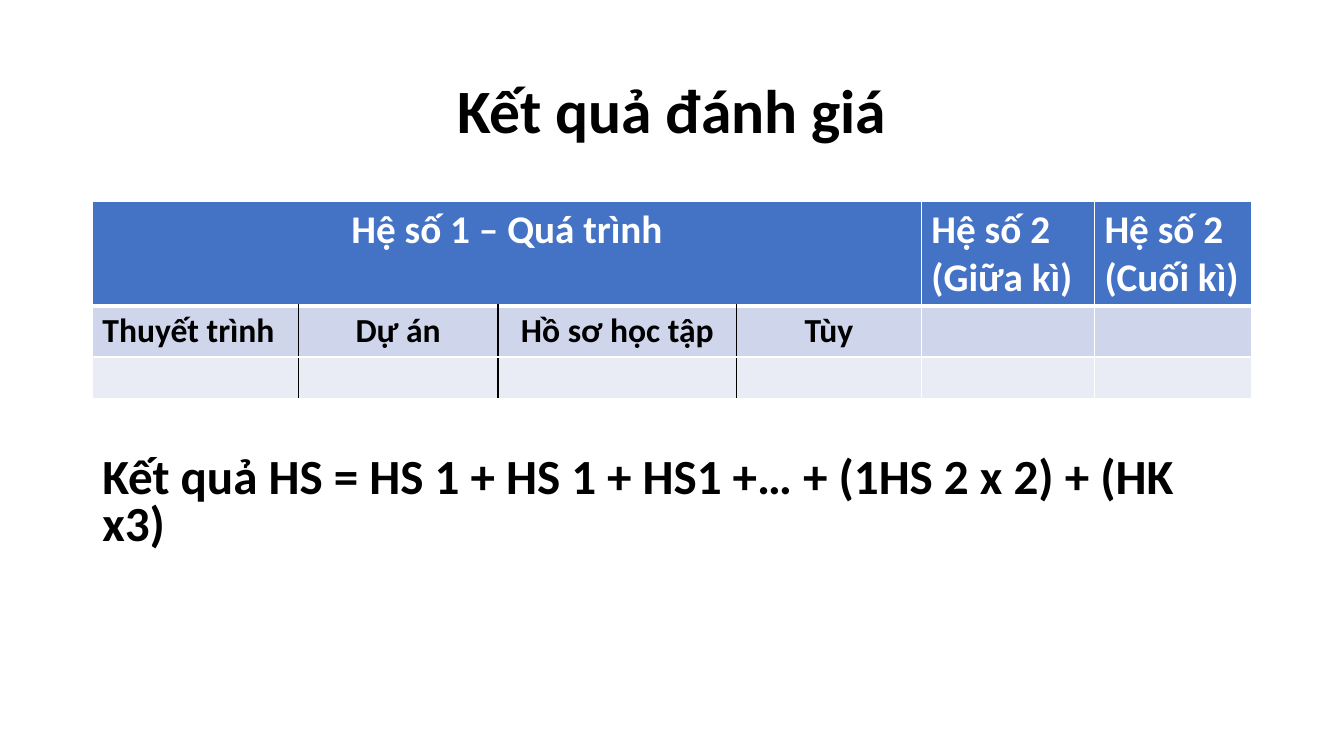
from lxml import etree
from pptx import Presentation, util as u
from pptx.dml.color import RGBColor
from pptx.enum import text
from pptx.oxml.ns import qn

COLORS = {"ink": "000000", "white": "FFFFFF", "header": "4472C4",
          "band": "CFD5EA", "light": "E9EBF5"}
CENTER, LEFT = text.PP_ALIGN.CENTER, text.PP_ALIGN.LEFT
MIDDLE, TOP = text.MSO_ANCHOR.MIDDLE, text.MSO_ANCHOR.TOP


def write(tf, content, size=24, color="ink", align=LEFT, spacing=None):
    """Fill a text frame, one paragraph per line of content."""
    for i, line in enumerate(content.split("\n")):
        p = tf.add_paragraph() if i else tf.paragraphs[0]
        p.alignment = align
        if spacing:
            p.line_spacing = spacing
        r = p.add_run()
        r.text = line
        r.font.name, r.font.size, r.font.bold = "Calibri", u.Pt(size), True
        r.font.color.rgb = RGBColor.from_string(COLORS[color])


class Deck:
    """Places elements on a grid of 160 columns by 90 rows."""

    def __init__(self):
        self.prs = Presentation()
        self.prs.slide_width, self.prs.slide_height = u.Inches(13.33), u.Inches(7.5)
        self.s = self.prs.slides.add_slide(self.prs.slide_layouts[6])

    def x(self, columns):
        return round(self.prs.slide_width * columns / 160)

    def y(self, rows):
        return round(self.prs.slide_height * rows / 90)

    def text_box(self, left, top, width, height, content, anchor=MIDDLE, **style):
        sp = self.s.shapes.add_textbox(self.x(left), self.y(top),
                                       self.x(width), self.y(height))
        tf = sp.text_frame
        tf.word_wrap, tf.vertical_anchor = True, anchor
        write(tf, content, **style)

    def table(self, left, top, widths, heights):
        table = self.s.shapes.add_table(
            len(heights), len(widths), self.x(left), self.y(top),
            self.x(sum(widths)), self.y(sum(heights))).table
        table.first_row = table.horz_banding = False
        for column, width in zip(table.columns, widths):
            column.width = self.x(width)
        for row, height in zip(table.rows, heights):
            row.height = self.y(height)
        return table

    def cell(self, cell, fill, borders):
        """Set the fill, and borders given as side: (colour, points)."""
        tcPr = cell._tc.get_or_add_tcPr()
        for side, (color, width) in borders.items():
            ln = etree.SubElement(tcPr, qn(f"a:ln{side}"), w=str(u.Pt(width)))
            solid = etree.SubElement(ln, qn("a:solidFill"))
            etree.SubElement(solid, qn("a:srgbClr"), val=COLORS[color])
        cell.fill.solid()
        cell.fill.fore_color.rgb = RGBColor.from_string(COLORS[fill])


def add_scores(deck):
    table = deck.table(11, 24, [24.5, 23.8, 28.4, 22, 20.6, 18.7], [12.4, 6.1, 4.9])
    for row, fill in enumerate(["header", "band", "light"]):
        for col in range(6):
            def edge(boundary):
                return ("ink" if row and boundary in (1, 2, 3) else "white", 1)

            deck.cell(table.cell(row, col), fill, {
                "L": edge(col), "R": edge(col + 1),
                "T": ("white", 3 if row == 1 else 1),
                "B": ("white", 3 if row == 0 else 1)})
    table.cell(0, 0).merge(table.cell(0, 3))

    headers = {0: "Hệ số 1 – Quá trình", 4: "Hệ số 2\n(Giữa kì)", 5: "Hệ số 2\n(Cuối kì)"}
    for col, label in headers.items():
        write(table.cell(0, col).text_frame, label, size=28, color="white",
              align=LEFT if col else CENTER)
    for col, label in enumerate(["Thuyết trình", "Dự án", "Hồ sơ học tập", "Tùy"]):
        write(table.cell(1, col).text_frame, label, align=CENTER if col else LEFT)


def main():
    deck = Deck()
    deck.text_box(11, 4.8, 138, 17.4, "Kết quả đánh giá",
                  size=44, align=CENTER, spacing=0.9)
    add_scores(deck)
    deck.text_box(11, 53.8, 138, 17.4,
                  "Kết quả HS = HS 1 + HS 1 + HS1 +… + (1HS 2 x 2) + (HK x3)",
                  anchor=TOP, size=35.1, spacing=0.8)
    deck.prs.save("out.pptx")


if __name__ == "__main__":
    main()
